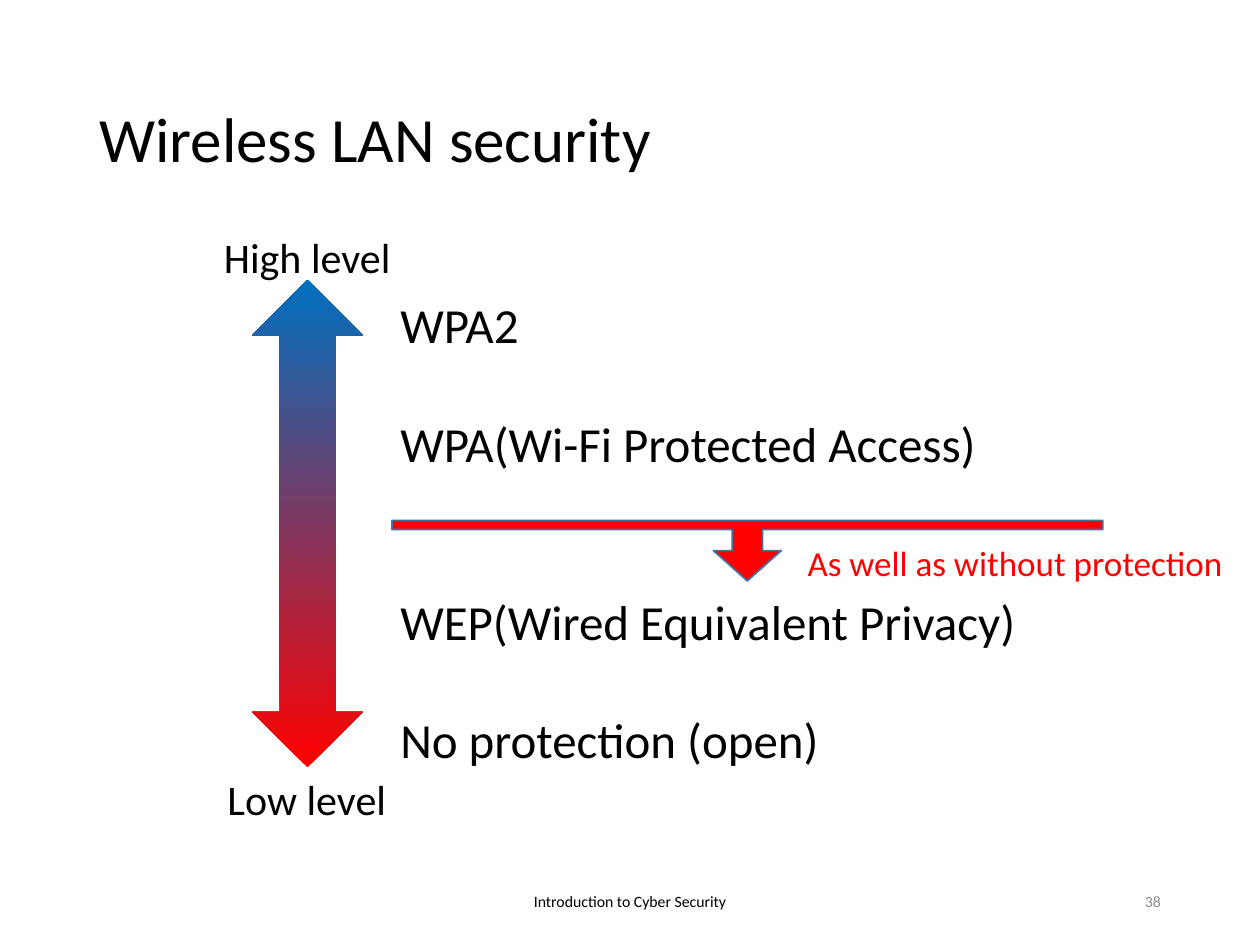
from dataclasses import dataclass

from pptx import Presentation
from pptx.dml.color import RGBColor as Color
from pptx.enum.shapes import MSO_SHAPE as Shape
from pptx.enum.text import MSO_ANCHOR as Anchor, PP_ALIGN as Align
from pptx.util import Cm, Pt


@dataclass(frozen=True)
class Theme:
    font: str = "Calibri"
    text: Color = Color(0x00, 0x00, 0x00)
    muted: Color = Color(0x8C, 0x8C, 0x8C)
    danger: Color = Color(0xFF, 0x00, 0x00)
    safe: Color = Color(0x00, 0x70, 0xC0)
    outline: Color = Color(0x43, 0x73, 0x9E)
    title_size: int = 36
    body_size: int = 28
    label_size: int = 24
    note_size: int = 20
    footer_size: int = 9


def write_paragraph(paragraph, text, *, font, size, color, align=Align.LEFT,
                    space_before=0, line_spacing=1.0):
    paragraph.alignment = align
    paragraph.space_before = Pt(space_before)
    paragraph.line_spacing = line_spacing
    run = paragraph.add_run()
    run.text = text
    run.font.name = font
    run.font.size = Pt(size)
    run.font.color.rgb = color


class SlideBuilder:
    def __init__(self, slide, theme):
        self.slide = slide
        self.theme = theme

    def add_text(self, box, lines, size, color=None, anchor=Anchor.TOP,
                 wrap=True, gaps=(0,), **style):
        shape = self.slide.shapes.add_textbox(*map(Cm, box))
        frame = shape.text_frame
        frame.word_wrap = wrap
        frame.vertical_anchor = anchor
        for index, (line, gap) in enumerate(zip(lines, gaps)):
            paragraph = frame.add_paragraph() if index else frame.paragraphs[0]
            write_paragraph(paragraph, line, font=self.theme.font, size=size,
                            color=color or self.theme.text, space_before=gap, **style)

    def add_rotated_shape(self, kind, box):
        shape = self.slide.shapes.add_shape(kind, *map(Cm, box))
        shape.shadow.inherit = False
        shape.rotation = 180
        return shape

    def add_level_arrow(self, box):
        arrow = self.add_rotated_shape(Shape.UP_DOWN_ARROW, box)
        arrow.fill.gradient()
        arrow.fill.gradient_angle = 270
        for stop, color in zip(arrow.fill.gradient_stops, (self.theme.danger, self.theme.safe)):
            stop.color.rgb = color
        arrow.line.fill.background()

    def add_boundary(self, box, adjustments):
        boundary = self.add_rotated_shape(Shape.UP_ARROW_CALLOUT, box)
        for index, value in enumerate(adjustments):
            boundary.adjustments[index] = value
        boundary.fill.solid()
        boundary.fill.fore_color.rgb = self.theme.danger
        boundary.line.color.rgb = self.theme.outline
        boundary.line.width = Pt(1)


def main():
    presentation = Presentation()
    presentation.slide_width, presentation.slide_height = Cm(25.4), Cm(19.05)
    theme = Theme()
    builder = SlideBuilder(presentation.slides.add_slide(presentation.slide_layouts[6]), theme)

    builder.add_text((1.75, 1.02, 21.89, 3.68), ["Wireless LAN security"],
                     theme.title_size, anchor=Anchor.MIDDLE, line_spacing=0.9)
    builder.add_text((8.41, 17.65, 8.58, 1.02), ["Introduction to Cyber Security"],
                     theme.footer_size, anchor=Anchor.MIDDLE, align=Align.CENTER)
    builder.add_text((17.93, 17.65, 5.72, 1.02), ["38"], theme.footer_size, theme.muted,
                     anchor=Anchor.MIDDLE, align=Align.RIGHT)

    line_height = 34
    protocols = ["WPA2", "WPA(Wi-Fi Protected Access)",
                 "WEP(Wired Equivalent Privacy)", "No protection (open)"]
    builder.add_text((7.82, 5.82, 16.41, 9.83), protocols, theme.body_size,
                     gaps=(0, line_height, 2 * line_height, line_height))

    builder.add_level_arrow((5.08, 5.64, 2.24, 9.83))
    builder.add_text((4.32, 15.47, 3.73, 1.27), ["Low level"], theme.label_size,
                     wrap=False, align=Align.CENTER)
    builder.add_text((4.24, 4.55, 3.91, 1.27), ["High level"], theme.label_size,
                     wrap=False, align=Align.CENTER)

    builder.add_boundary((7.9, 10.49, 14.33, 1.22), (0.5, 0.56, 0.5, 0.15))
    builder.add_text((16.03, 10.8, 9.37, 1.12), ["As well as without protection"],
                     theme.note_size, theme.danger)

    presentation.save("out.pptx")


if __name__ == "__main__":
    main()
